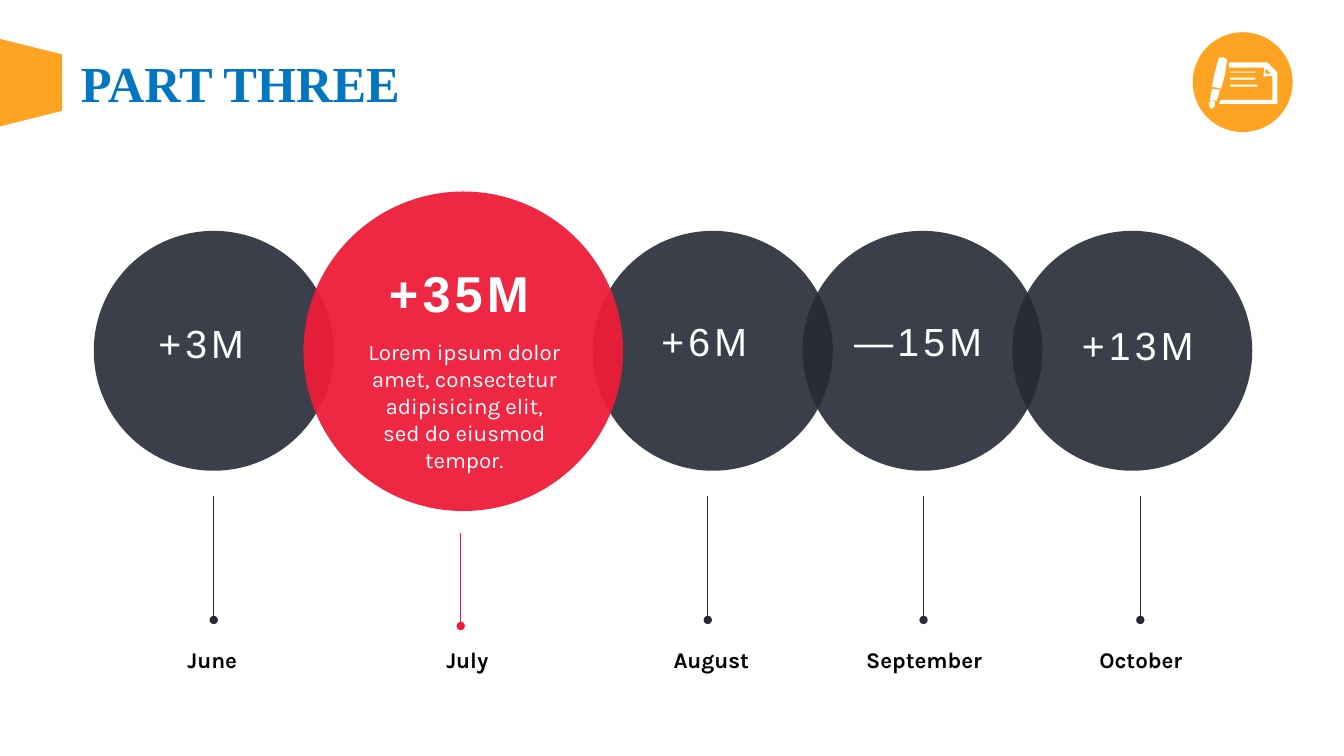
from pptx import Presentation
from pptx.dml.color import RGBColor
from pptx.enum.shapes import MSO_CONNECTOR, MSO_SHAPE
from pptx.enum.text import MSO_ANCHOR, MSO_AUTO_SIZE, PP_ALIGN
from pptx.oxml.ns import qn
from pptx.util import Inches, Pt
from lxml.etree import SubElement

ORANGE, BLUE, DARK, RED = "FFA422", "0376C2", "262B36", "EE1C39"
WHITE, BLACK = "FFFFFF", "000000"

# month, circle left, value, value left, value top, line x, label left
MONTHS = [
    ("June", 0.93, "+3M", 1.08, 3.12, 2.12, 1.38),
    ("August", 5.88, "+6M", 6.07, 3.1, 7.02, 6.33),
    ("September", 7.96, "—15M", 8.19, 3.1, 9.16, 8.44),
    ("October", 10.04, "+13M", 10.37, 3.14, 11.31, 10.59),
]


def bar(left, top, right, bottom):
    return [(left, top), (right, top), (right, bottom), (left, bottom)]


# Outlines of the pen and paper icon, in hundredths of an inch
PEN_AND_PAPER = [
    [(1209, 57), (1214, 57), (1217, 59), (1215, 74), (1211, 88),
     (1207, 87), (1202, 86), (1205, 71)],
    [(1211, 99), (1209, 103), (1267, 103), (1267, 72), (1257, 62),
     (1219, 62), (1219, 67), (1254, 67), (1253, 76), (1262, 75), (1262, 99)],
    [(1261, 73), (1255, 73), (1255, 68)],
    bar(1220, 84, 1247, 86),
    bar(1220, 77, 1245, 79),
    bar(1220, 71, 1245, 72),
    [(1201, 99), (1205, 101), (1205, 105), (1202, 108), (1200, 107), (1199, 103)],
    [(1202, 88), (1200, 99), (1207, 100), (1210, 89)],
]


def rgb(color):
    return RGBColor.from_string(color)


class SlideBuilder:
    def __init__(self, prs):
        self.s = prs.slides.add_slide(prs.slide_layouts[5])

    def paint(self, sp, color, opacity=100):
        sp.shadow.inherit = False
        sp.fill.solid()
        sp.fill.fore_color.rgb = rgb(color)
        sp.line.fill.background()
        if opacity < 100:
            clr = sp._element.spPr.find(qn("a:solidFill"))[0]
            SubElement(clr, qn("a:alpha")).set("val", str(opacity * 1000))

    def set_text(self, sp, text, size, font, color, bold=False, spacing=0,
                 align=PP_ALIGN.CENTER):
        tf = sp.text_frame
        tf.word_wrap = True
        tf.auto_size = MSO_AUTO_SIZE.SHAPE_TO_FIT_TEXT
        tf.vertical_anchor = MSO_ANCHOR.TOP
        p = tf.paragraphs[0]
        p.alignment = align
        r = p.add_run()
        r.text = text
        r.font.size, r.font.name, r.font.bold = Pt(size), font, bold
        r.font.color.rgb = rgb(color)
        if spacing:
            r._r.get_or_add_rPr().set("spc", str(spacing * 100))

    def title(self, text, left, top, width, height):
        sp = self.s.shapes.title
        sp.left, sp.top = Inches(left), Inches(top)
        sp.width, sp.height = Inches(width), Inches(height)
        self.set_text(sp, text, 36, "Times New Roman", BLUE, bold=True)

    def text(self, text, left, top, width, height, size, font, color, **style):
        sp = self.s.shapes.add_textbox(Inches(left), Inches(top),
                                       Inches(width), Inches(height))
        self.set_text(sp, text, size, font, color, **style)

    def side_tab(self):
        sp = self.s.shapes.add_shape(MSO_SHAPE.TRAPEZOID, Inches(-0.13), Inches(0.51),
                                     Inches(0.87), Inches(0.62))
        sp.rotation = 90
        self.paint(sp, ORANGE)

    def circle(self, left, top, size, color, opacity=100, shapes=None):
        shapes = self.s.shapes if shapes is None else shapes
        sp = shapes.add_shape(MSO_SHAPE.OVAL, Inches(left), Inches(top),
                              Inches(size), Inches(size))
        self.paint(sp, color, opacity)

    def icon(self):
        shapes = self.s.shapes.add_group_shape().shapes
        self.circle(11.83, 0.32, 0.99, ORANGE, shapes=shapes)
        first, *others = PEN_AND_PAPER
        fb = shapes.build_freeform(*first[0], scale=Inches(0.01))
        fb.add_line_segments(first[1:])
        for outline in others:
            fb.move_to(*outline[0])
            fb.add_line_segments(outline[1:])
        self.paint(fb.convert_to_shape(), WHITE)

    def pin(self, x, top, bottom, color):
        """Draw a vertical line that ends in a dot."""
        cx = self.s.shapes.add_connector(MSO_CONNECTOR.STRAIGHT, Inches(x), Inches(top),
                                         Inches(x), Inches(bottom))
        cx.line.color.rgb = rgb(color)
        cx.line.width = Pt(0.5)
        ln = cx._element.spPr.find(qn("a:ln"))
        SubElement(ln, qn("a:tailEnd")).set("type", "oval")
        SubElement(cx._element.spPr, qn("a:effectLst"))

    def month(self, name, left):
        self.text(name, left, 6.36, 1.45, 0.37, 16, "Karla", BLACK, bold=True)


def main():
    prs = Presentation()
    prs.slide_width, prs.slide_height = Inches(13.33), Inches(7.5)
    b = SlideBuilder(prs)
    b.title("PART THREE", 0.62, 0.47, 3.53, 0.71)
    b.side_tab()
    b.icon()

    for _, left, *_ in MONTHS:
        b.circle(left, 2.29, 2.38, DARK, 90)
    b.circle(3.01, 1.9, 3.17, RED, 95)

    b.text("+35M", 3.76, 2.55, 1.83, 0.71, 36, "Arial", WHITE,
           bold=True, spacing=3, align=PP_ALIGN.LEFT)
    b.text("Lorem ipsum dolor amet, consectetur adipisicing elit, sed do eiusmod tempor.",
           3.52, 3.31, 2.17, 1.45, 16, "Karla", WHITE)
    b.month("July", 3.91)
    b.pin(4.57, 5.29, 6.21, RED)

    for name, _, value, value_left, value_top, line_x, label_left in MONTHS:
        b.text(value, value_left, value_top, 1.83, 0.57, 28, "Arial", WHITE, spacing=3)
        b.month(name, label_left)
        b.pin(line_x, 4.92, 6.15, DARK)

    prs.save("out.pptx")


if __name__ == "__main__":
    main()
